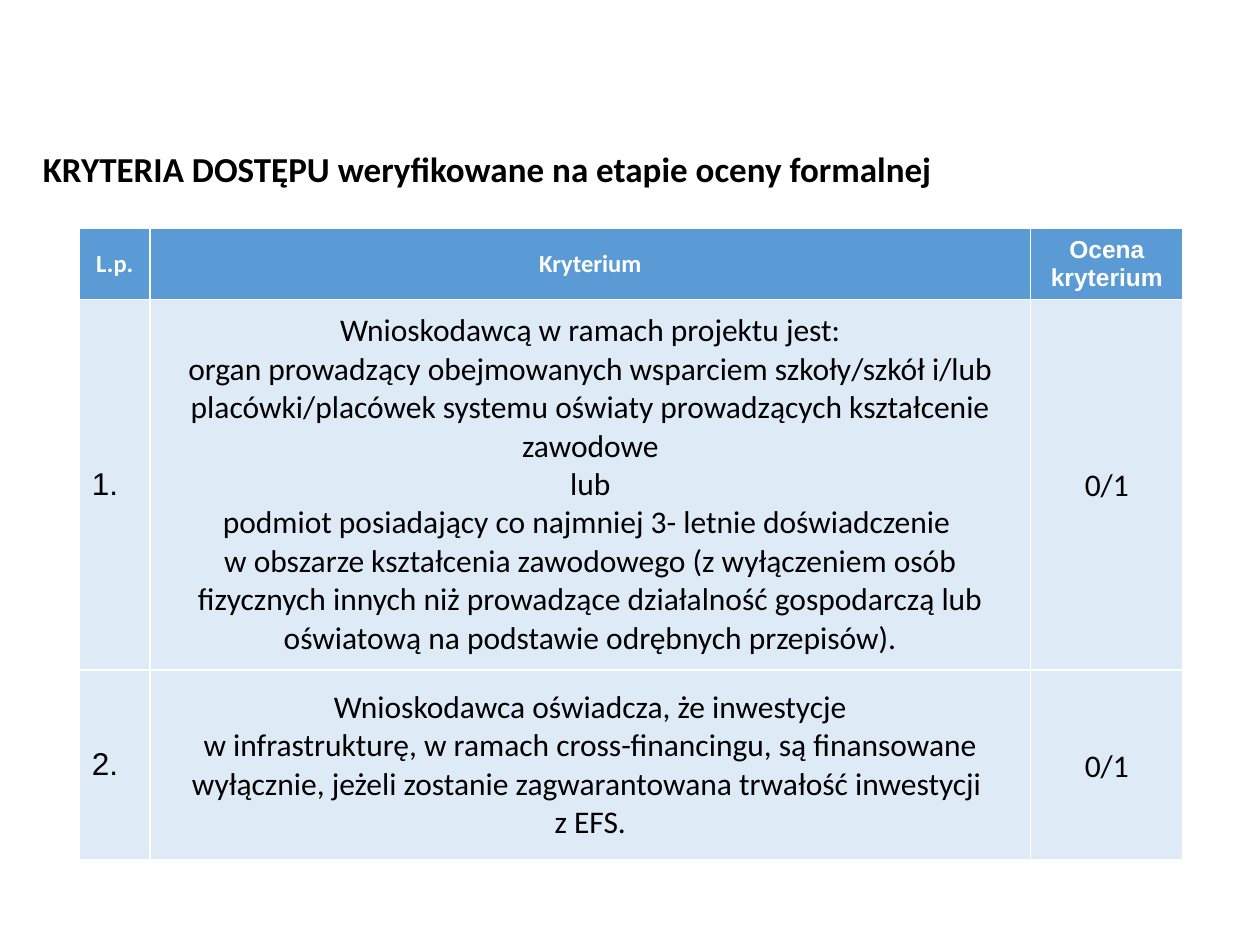
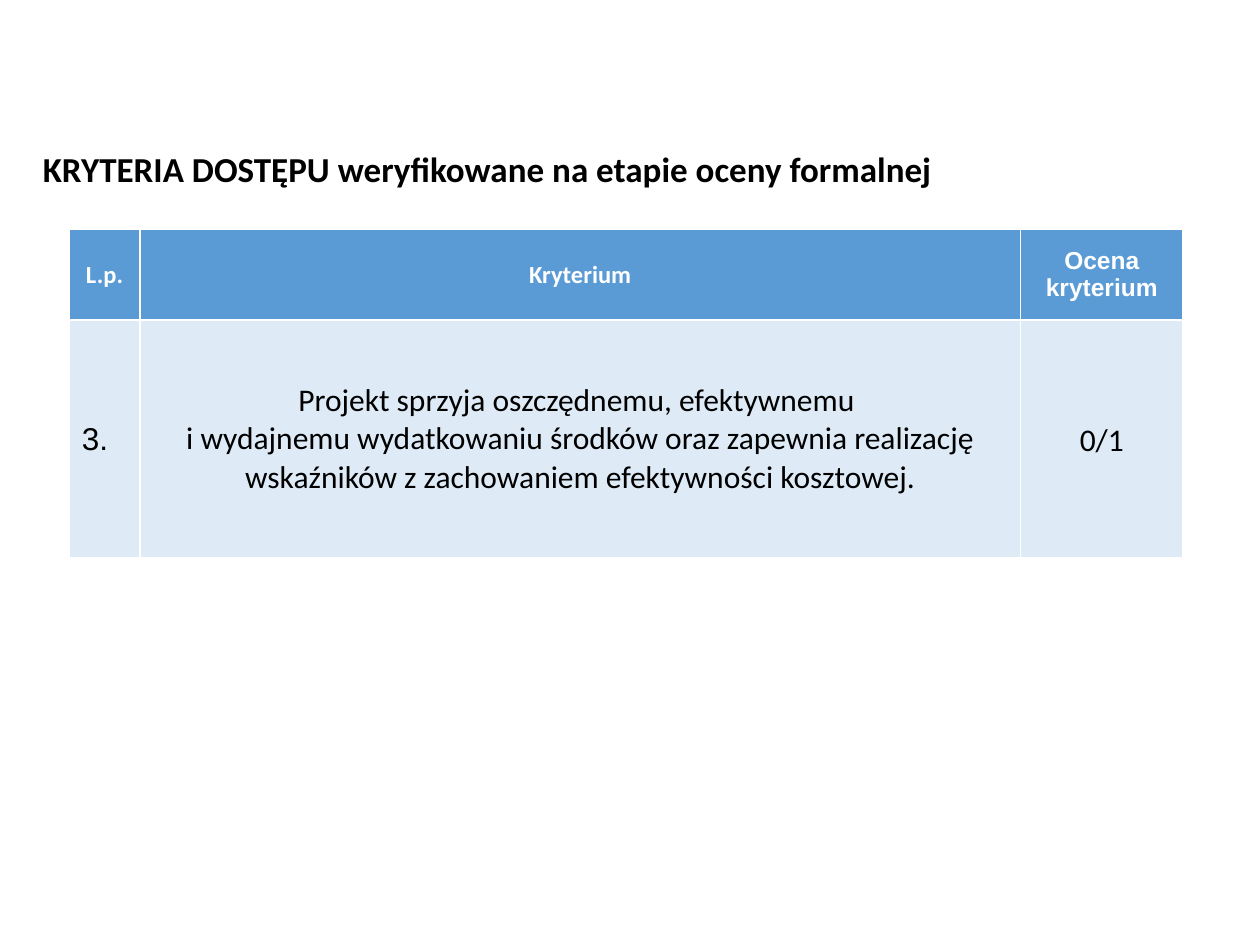
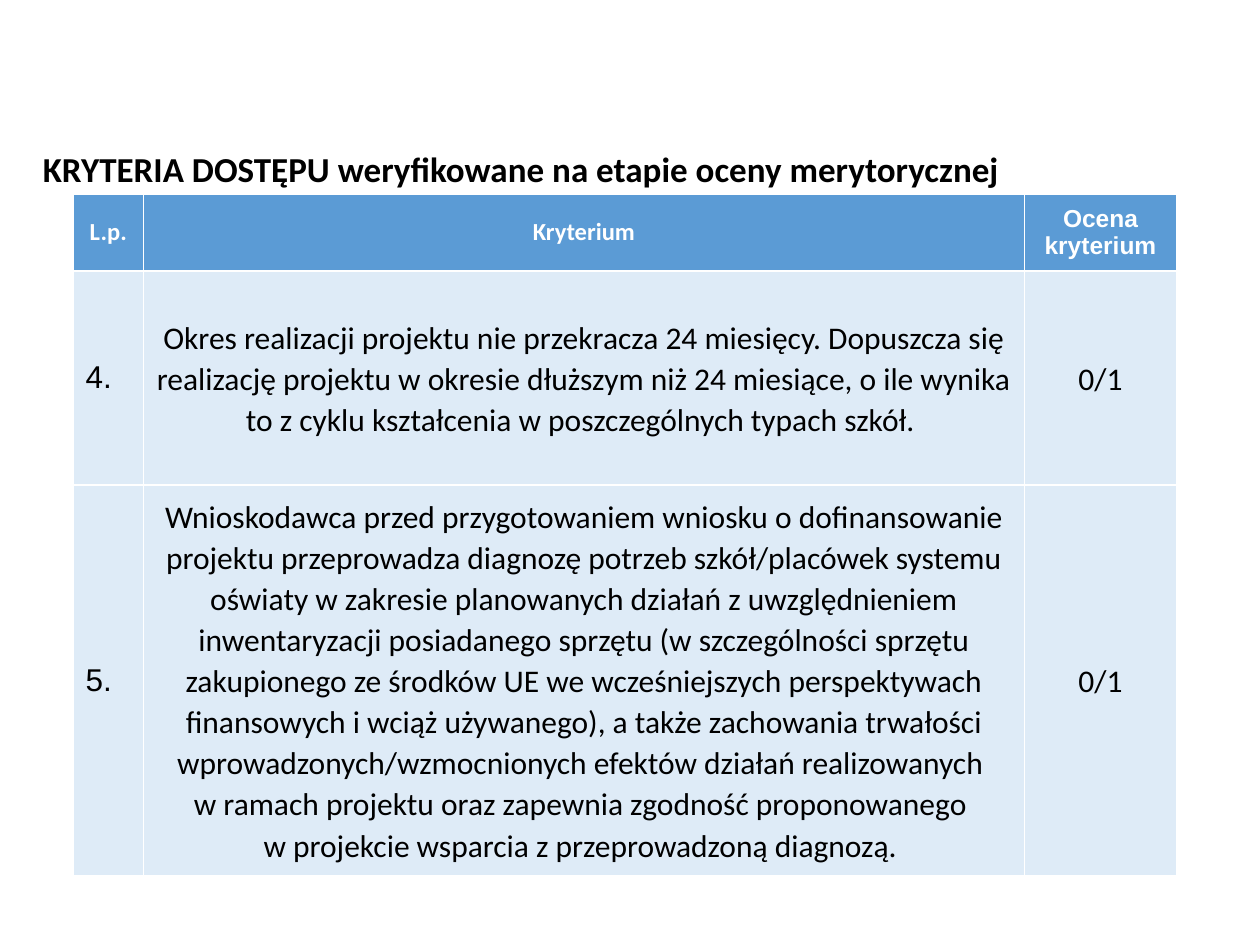
from pptx import Presentation
from pptx.dml.color import RGBColor
from pptx.enum.text import MSO_ANCHOR, MSO_AUTO_SIZE, PP_ALIGN
from pptx.util import Inches, Pt

LEFT = PP_ALIGN.LEFT
CENTER = PP_ALIGN.CENTER
MIDDLE = MSO_ANCHOR.MIDDLE
FIT_SHAPE = MSO_AUTO_SIZE.SHAPE_TO_FIT_TEXT
TITLE_ONLY = 5

COLORS = {"header": "5B9BD5", "body": "DEEBF7", "white": "FFFFFF", "black": "000000"}
HEADINGS = [("L.p.", "Calibri"), ("Kryterium", "Calibri"), ("Ocena kryterium", "Arial")]
SCORE = "0/1"
TIGHT = 0.04

FORMAL_TITLE = "KRYTERIA DOSTĘPU weryfikowane na etapie oceny formalnej"
CONTENT_TITLE = "KRYTERIA DOSTĘPU weryfikowane na etapie oceny merytorycznej"

APPLICANT = (
    "Wnioskodawcą w ramach projektu jest:\n"
    "organ prowadzący obejmowanych wsparciem szkoły/szkół i/lub placówki/placówek "
    "systemu oświaty prowadzących kształcenie zawodowe\n"
    "lub\n"
    "podmiot posiadający co najmniej 3- letnie doświadczenie \v"
    "w obszarze kształcenia zawodowego (z wyłączeniem osób fizycznych innych niż "
    "prowadzące działalność gospodarczą lub oświatową na podstawie odrębnych przepisów)."
)
INVESTMENT = (
    "Wnioskodawca oświadcza, że inwestycje\v"
    "w infrastrukturę, w ramach cross-financingu, są finansowane wyłącznie, jeżeli "
    "zostanie zagwarantowana trwałość inwestycji \vz EFS."
)
EFFICIENCY = (
    "Projekt sprzyja oszczędnemu, efektywnemu \n"
    "i wydajnemu wydatkowaniu środków oraz zapewnia realizację wskaźników "
    "z zachowaniem efektywności kosztowej."
)
DURATION = (
    "Okres realizacji projektu nie przekracza 24 miesięcy. Dopuszcza się realizację "
    "projektu w okresie dłuższym niż 24 miesiące, o ile wynika to z cyklu kształcenia "
    "w poszczególnych typach szkół. "
)
DIAGNOSIS = (
    "Wnioskodawca przed przygotowaniem wniosku o dofinansowanie projektu przeprowadza "
    "diagnozę potrzeb szkół/placówek systemu oświaty w zakresie planowanych działań "
    "z uwzględnieniem inwentaryzacji posiadanego sprzętu (w szczególności sprzętu "
    "zakupionego ze środków UE we wcześniejszych perspektywach finansowych i wciąż "
    "używanego), a także zachowania trwałości wprowadzonych/wzmocnionych efektów "
    "działań realizowanych \vw ramach projektu oraz zapewnia zgodność proponowanego \v"
    "w projekcie wsparcia z przeprowadzoną diagnozą. "
)


def write_text(text_frame, text, size=18, font="Calibri", color="black", bold=False,
               align=CENTER, line_spacing=None):
    """Write text into a frame, one paragraph for each line."""
    for index, line in enumerate(text.split("\n")):
        paragraph = text_frame.add_paragraph() if index else text_frame.paragraphs[0]
        paragraph.text = line
        paragraph.alignment = align
        if line_spacing:
            paragraph.line_spacing = line_spacing
        for run in paragraph.runs:
            run.font.size = Pt(size)
            run.font.name = font
            run.font.bold = bold
            run.font.color.rgb = RGBColor.from_string(COLORS[color])


def add_title(slide, text, width):
    """Place and write the slide title."""
    title = slide.shapes.title
    title.left, title.top = Inches(0.24), Inches(1.12)
    title.width, title.height = Inches(width), Inches(0.44)
    title.text_frame.vertical_anchor = MIDDLE
    title.text_frame.auto_size = FIT_SHAPE
    write_text(title.text_frame, text, size=20, bold=True, align=LEFT)


def fill_cell(cell, text, fill, margin=None, **text_format):
    """Fill a table cell and write its text."""
    cell.fill.solid()
    cell.fill.fore_color.rgb = RGBColor.from_string(COLORS[fill])
    cell.vertical_anchor = MIDDLE
    if margin is not None:
        cell.margin_left = cell.margin_right = Inches(margin)
        cell.margin_top = cell.margin_bottom = Inches(margin)
    write_text(cell.text_frame, text, **text_format)


def add_criteria_table(slide, left, top, row_heights, criteria, first_number,
                       score_width=1.21, margin=None, line_spacing=None):
    """Add a table of numbered criteria with their scores."""
    widths = [0.56, 6.99, score_width]
    table = slide.shapes.add_table(
        len(row_heights), len(widths), Inches(left), Inches(top),
        Inches(sum(widths)), Inches(sum(row_heights))).table
    for column, width in zip(table.columns, widths):
        column.width = Inches(width)
    for row, height in zip(table.rows, row_heights):
        row.height = Inches(height)
    for cell, (heading, font) in zip(table.rows[0].cells, HEADINGS):
        fill_cell(cell, heading, "header", size=14, font=font, color="white", bold=True)
    for row, criterion in enumerate(criteria, start=1):
        number = f"{first_number + row - 1}."
        fill_cell(table.cell(row, 0), number, "body", font="Arial", align=LEFT)
        fill_cell(table.cell(row, 1), criterion, "body", margin, line_spacing=line_spacing)
        fill_cell(table.cell(row, 2), SCORE, "body", TIGHT, line_spacing=1.07)


def add_criteria_slide(presentation, title, title_width, **table_format):
    """Add a slide with a title and a criteria table."""
    slide = presentation.slides.add_slide(presentation.slide_layouts[TITLE_ONLY])
    add_title(slide, title, title_width)
    add_criteria_table(slide, **table_format)


def main():
    """Build and save the presentation."""
    presentation = Presentation()
    presentation.slide_width, presentation.slide_height = Inches(10), Inches(7.5)
    add_criteria_slide(
        presentation, FORMAL_TITLE, 9.09, left=0.63, top=1.81,
        row_heights=[0.54, 2.94, 1.51], criteria=[APPLICANT, INVESTMENT], first_number=1)
    add_criteria_slide(
        presentation, FORMAL_TITLE, 9.14, left=0.55, top=1.82, row_heights=[0.72, 1.89],
        criteria=[EFFICIENCY], first_number=3, score_width=1.29, margin=TIGHT)
    add_criteria_slide(
        presentation, CONTENT_TITLE, 9.1, left=0.58, top=1.54,
        row_heights=[0.61, 1.7, 3.1], criteria=[DURATION, DIAGNOSIS], first_number=4,
        margin=TIGHT, line_spacing=1.07)
    presentation.save("out.pptx")


if __name__ == "__main__":
    main()
